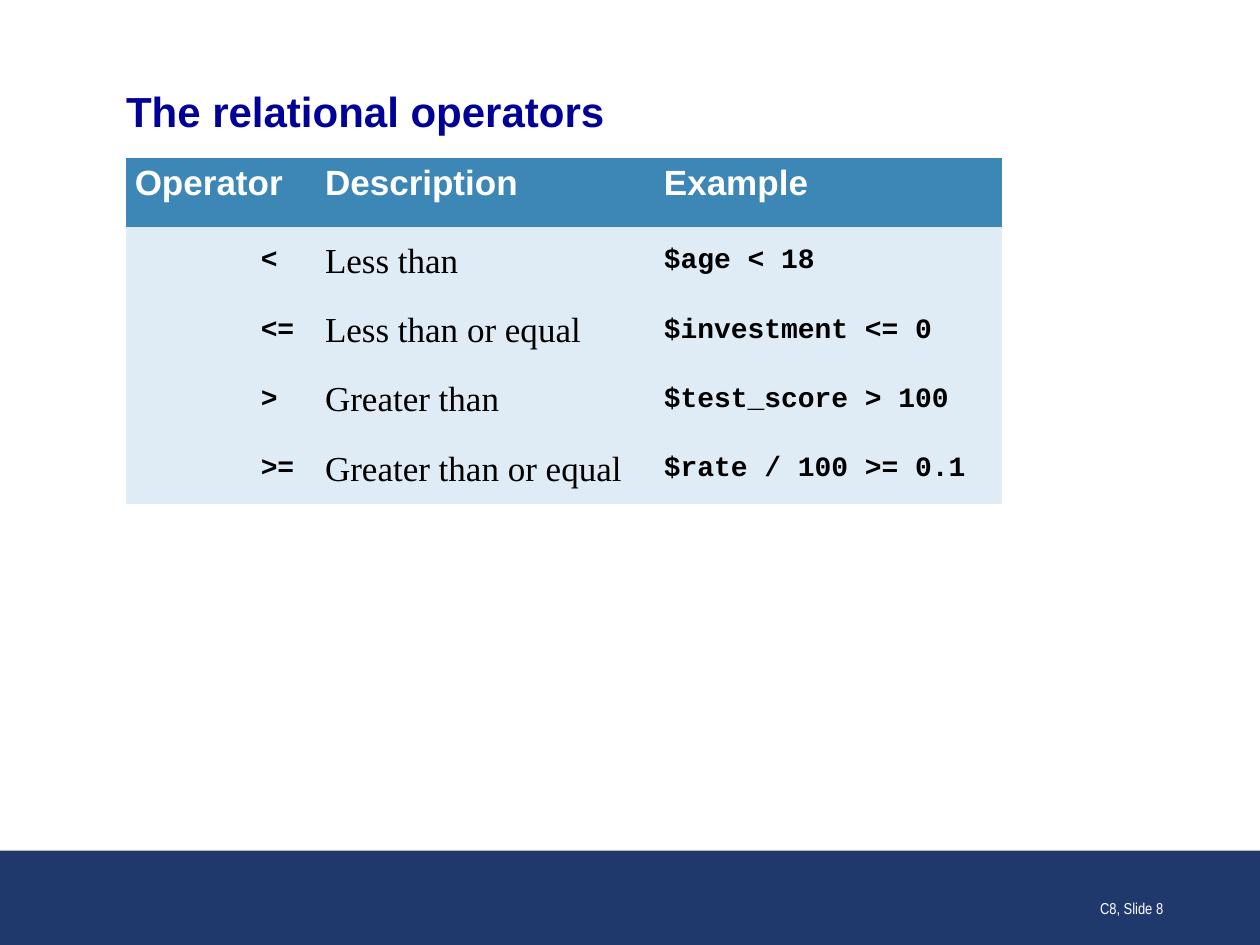
from dataclasses import dataclass

from pptx import Presentation
from pptx.dml.color import RGBColor
from pptx.enum.shapes import MSO_SHAPE
from pptx.enum.text import MSO_ANCHOR, PP_ALIGN
from pptx.oxml.ns import qn
from pptx.util import Pt

EMU_PER_PX = 9144  # 100 px to the inch
RECTANGLE = MSO_SHAPE.RECTANGLE
TOP, MIDDLE, BOTTOM = MSO_ANCHOR.TOP, MSO_ANCHOR.MIDDLE, MSO_ANCHOR.BOTTOM
LEFT, RIGHT = PP_ALIGN.LEFT, PP_ALIGN.RIGHT
TITLE_ONLY = 5
PLAIN_TABLE_STYLE = "{2D5ABB26-0587-4C30-8999-92F81FD0307C}"

COLUMN_WIDTHS = (151, 269, 275)
ROW_HEIGHT = 55
CELL_MARGIN_X, CELL_MARGIN_Y = 7, 5
OPERATOR_INDENT = 107
HEADINGS = ("Operator", "Description", "Example")
OPERATORS = (
    ("<", "Less than", "$age < 18"),
    ("<=", "Less than or equal", "$investment <= 0"),
    (">", "Greater than", "$test_score > 100"),
    (">=", "Greater than or equal", "$rate / 100 >= 0.1"),
)


@dataclass(frozen=True)
class TextStyle:
    font: str
    size: int
    color: str
    bold: bool = False


@dataclass(frozen=True)
class Theme:
    band: str = "20396D"
    header_fill: str = "3D87B7"
    body_fill: str = "DFECF5"
    title: TextStyle = TextStyle("Arial", 24, "000099", True)
    heading: TextStyle = TextStyle("Arial", 20, "FFFFFF", True)
    code: TextStyle = TextStyle("Courier New", 16, "000000", True)
    description: TextStyle = TextStyle("Times New Roman", 20, "000000")
    footer: TextStyle = TextStyle("Arial Narrow", 9, "FFFFFF")


THEME = Theme()


def px(length):
    return length * EMU_PER_PX


def place(shape, left, top, width, height):
    shape.left, shape.top = px(left), px(top)
    shape.width, shape.height = px(width), px(height)


def fill_solid(item, color):
    item.fill.solid()
    item.fill.fore_color.rgb = RGBColor.from_string(color)


def write(frame, text, style, align=LEFT):
    frame.text = text
    para = frame.paragraphs[0]
    para.alignment = align
    font = para.runs[0].font
    font.name, font.size, font.bold = style.font, Pt(style.size), style.bold
    font.color.rgb = RGBColor.from_string(style.color)


def set_title(slide, text):
    title = slide.shapes.title
    place(title, 100, 68, 800, 40)
    frame = title.text_frame
    frame.margin_left = frame.margin_right = 0
    frame.margin_top = frame.margin_bottom = 0
    frame.vertical_anchor = MIDDLE
    write(frame, text, THEME.title)


def add_footer_band(slide):
    band = slide.shapes.add_shape(RECTANGLE, 0, px(675), px(1000), px(75))
    band.shadow.inherit = False
    fill_solid(band, THEME.band)
    band.line.fill.background()


def add_footer_text(slide, text):
    box = slide.shapes.add_textbox(px(725), px(683), px(208), px(50))
    frame = box.text_frame
    frame.word_wrap = True
    frame.vertical_anchor = BOTTOM
    write(frame, text, THEME.footer, RIGHT)


def fill_cell(cell, text, style, fill, anchor, indent=CELL_MARGIN_X):
    cell.margin_left, cell.margin_right = px(indent), px(CELL_MARGIN_X)
    cell.margin_top = cell.margin_bottom = px(CELL_MARGIN_Y)
    cell.vertical_anchor = anchor
    fill_solid(cell, fill)
    write(cell.text_frame, text, style)


def add_operator_table(slide):
    row_count = len(OPERATORS) + 1
    holder = slide.shapes.add_table(
        row_count, len(COLUMN_WIDTHS), px(100), px(125),
        px(sum(COLUMN_WIDTHS)), px(ROW_HEIGHT * row_count))
    table = holder.table
    table.horz_banding = False
    for style_id in holder.element.iter(qn("a:tableStyleId")):
        style_id.text = PLAIN_TABLE_STYLE
    for column, width in zip(table.columns, COLUMN_WIDTHS):
        column.width = px(width)
    for row in table.rows:
        row.height = px(ROW_HEIGHT)

    for column, heading in enumerate(HEADINGS):
        fill_cell(table.cell(0, column), heading, THEME.heading,
                  THEME.header_fill, TOP)
    styles = (THEME.code, THEME.description, THEME.code)
    indents = (OPERATOR_INDENT, CELL_MARGIN_X, CELL_MARGIN_X)
    for row, texts in enumerate(OPERATORS, start=1):
        for column, (text, style, indent) in enumerate(zip(texts, styles, indents)):
            fill_cell(table.cell(row, column), text, style,
                      THEME.body_fill, MIDDLE, indent)


def main():
    deck = Presentation()
    deck.slide_width, deck.slide_height = px(1000), px(750)
    slide = deck.slides.add_slide(deck.slide_layouts[TITLE_ONLY])
    add_footer_band(slide)
    set_title(slide, "The relational operators")
    add_operator_table(slide)
    add_footer_text(slide, "C8, Slide 8")
    deck.save("out.pptx")


if __name__ == "__main__":
    main()
